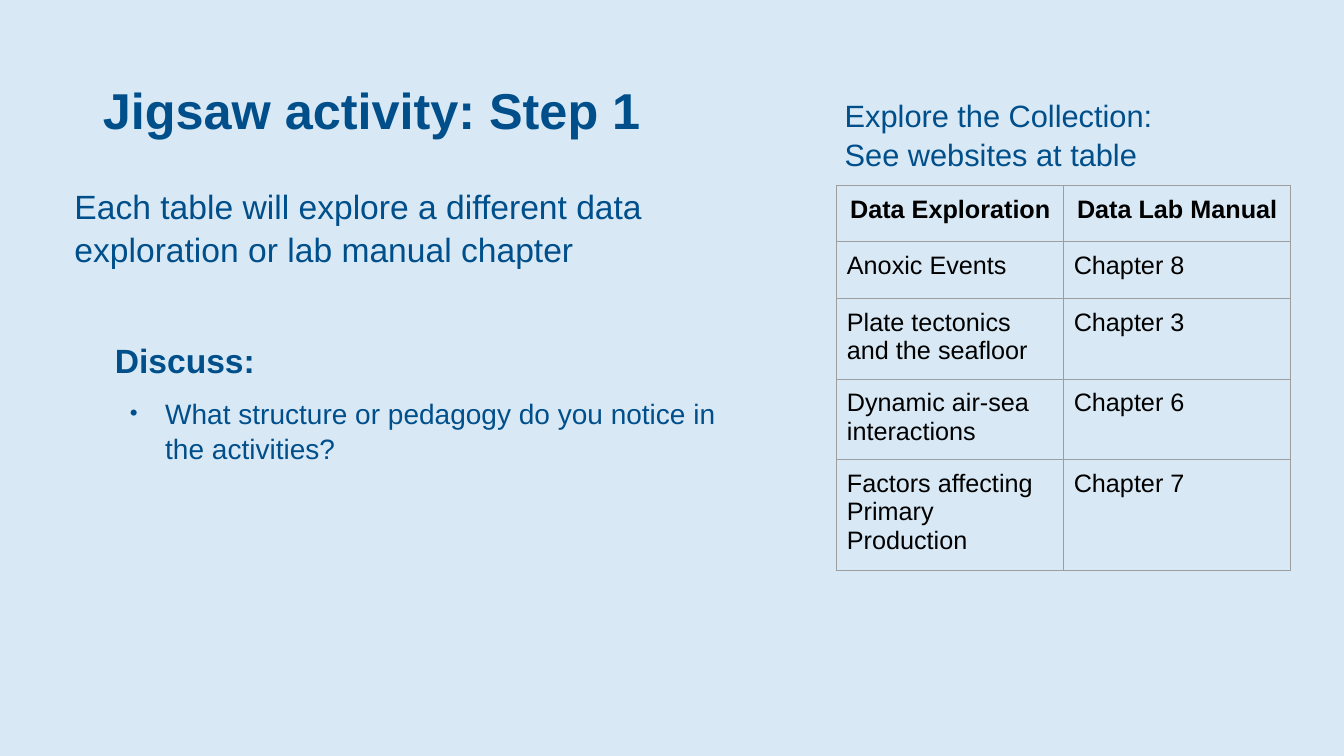
from lxml.etree import SubElement
from pptx import Presentation
from pptx.dml.color import RGBColor
from pptx.enum.text import MSO_ANCHOR, PP_ALIGN
from pptx.oxml.ns import qn
from pptx.util import Inches, Pt

BACKGROUND = RGBColor(0xD8, 0xE9, 0xF5)
BLUE = RGBColor(0x00, 0x4F, 0x8B)
BLACK = RGBColor(0x00, 0x00, 0x00)
BORDER = RGBColor(0x9E, 0x9E, 0x9E)
FONT = "Arial"
LINE_SPACING = 1.06

ROWS = [
    ("Data Exploration", "Data Lab Manual"),
    ("Anoxic Events", "Chapter 8"),
    ("Plate tectonics and the seafloor", "Chapter 3"),
    ("Dynamic air-sea interactions", "Chapter 6"),
    ("Factors affecting Primary Production", "Chapter 7"),
]
ROW_HEIGHTS = [0.56, 0.56, 0.76, 0.76, 1.04]


def format_font(paragraph, size, color=BLUE, bold=False):
    font = paragraph.font
    font.name = FONT
    font.size = Pt(size)
    font.bold = bold
    font.color.rgb = color


def set_indent(paragraph, margin, first_line):
    properties = paragraph._p.get_or_add_pPr()
    properties.set("marL", str(Inches(margin)))
    properties.set("indent", str(Inches(first_line)))
    return properties


def add_bullet(properties):
    color = SubElement(properties, qn("a:buClr"))
    SubElement(color, qn("a:srgbClr"), val=str(BLUE))
    SubElement(properties, qn("a:buSzPct"), val="80000")
    SubElement(properties, qn("a:buFont"), typeface=FONT)
    SubElement(properties, qn("a:buChar"), char="•")


def add_text_frame(slide, left, top, width, height):
    box = slide.shapes.add_textbox(Inches(left), Inches(top), Inches(width), Inches(height))
    box.text_frame.word_wrap = True
    return box.text_frame


def place_title(slide, left, top, width, height):
    title = slide.shapes.title
    title.left, title.top = Inches(left), Inches(top)
    title.width, title.height = Inches(width), Inches(height)
    title.text_frame.text = "Jigsaw activity: Step 1"
    title.text_frame.vertical_anchor = MSO_ANCHOR.MIDDLE
    paragraph = title.text_frame.paragraphs[0]
    paragraph.alignment = PP_ALIGN.LEFT
    paragraph.line_spacing = 0.9
    format_font(paragraph, 36, bold=True)


def add_instructions(slide, left, top, width, height):
    frame = add_text_frame(slide, left, top, width, height)
    frame.text = "\n".join([
        "Each table will explore a different data exploration or lab manual chapter",
        "Discuss:",
        "What structure or pedagogy do you notice in the activities?",
    ])
    task, heading, question = frame.paragraphs
    for paragraph in frame.paragraphs:
        paragraph.line_spacing = LINE_SPACING
    heading.space_before = Pt(49)
    question.space_before = Pt(10)
    set_indent(task, 0.1, 0)
    set_indent(heading, 0, 0.5)
    add_bullet(set_indent(question, 1, -0.35))
    format_font(task, 24)
    format_font(heading, 24, bold=True)
    format_font(question, 20)


def add_table_caption(slide, left, top, width, height):
    frame = add_text_frame(slide, left, top, width, height)
    frame.margin_top = frame.margin_bottom = Inches(0.1)
    frame.text = "Explore the Collection:\nSee websites at table"
    for paragraph in frame.paragraphs:
        paragraph.line_spacing = LINE_SPACING
        format_font(paragraph, 22)


def add_cell_borders(cell):
    properties = cell._tc.get_or_add_tcPr()
    for side in ("a:lnL", "a:lnR", "a:lnT", "a:lnB"):
        line = SubElement(properties, qn(side), w=str(Pt(0.75)))
        fill = SubElement(line, qn("a:solidFill"))
        SubElement(fill, qn("a:srgbClr"), val=str(BORDER))


def add_collection_table(slide, left, top, width):
    column_count = len(ROWS[0])
    table = slide.shapes.add_table(
        len(ROWS), column_count, Inches(left), Inches(top),
        Inches(width), Inches(sum(ROW_HEIGHTS))).table
    table.first_row = table.horz_banding = False
    for column in table.columns:
        column.width = Inches(width / column_count)
    for row_index, texts in enumerate(ROWS):
        is_header = row_index == 0
        table.rows[row_index].height = Inches(ROW_HEIGHTS[row_index])
        for column_index, text in enumerate(texts):
            cell = table.cell(row_index, column_index)
            cell.text = text
            cell.margin_left = cell.margin_right = Inches(0.1)
            cell.margin_top = cell.margin_bottom = Inches(0.1)
            add_cell_borders(cell)
            cell.fill.background()
            paragraph = cell.text_frame.paragraphs[0]
            paragraph.alignment = PP_ALIGN.CENTER if is_header else PP_ALIGN.LEFT
            format_font(paragraph, 18, BLACK, bold=is_header)


def main():
    presentation = Presentation()
    presentation.slide_width = Inches(13.33)
    presentation.slide_height = Inches(7.5)
    slide = presentation.slides.add_slide(presentation.slide_layouts[5])
    slide.background.fill.solid()
    slide.background.fill.fore_color.rgb = BACKGROUND

    # Title and discussion on the left
    place_title(slide, 0.92, 0.4, 11.5, 1.45)
    add_instructions(slide, 0.54, 1.77, 7.08, 5.19)

    # Collection assignments on the right
    add_table_caption(slide, 8.28, 0.84, 3.27, 0.93)
    add_collection_table(slide, 8.3, 1.84, 4.5)

    presentation.save("out.pptx")


if __name__ == "__main__":
    main()
